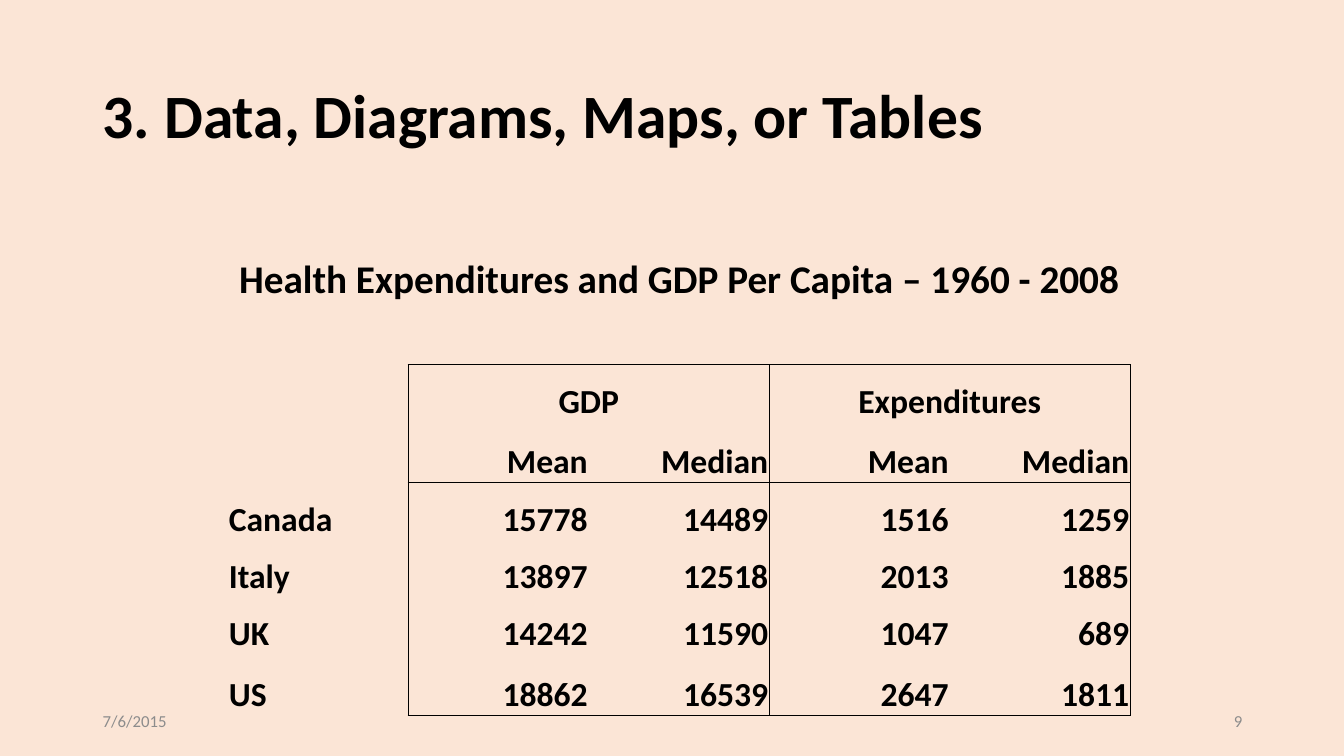
from lxml import etree
from pptx import Presentation
from pptx import util as u
from pptx.dml.color import RGBColor
from pptx.enum import text
from pptx.oxml import ns

LEFT, CENTER, RIGHT = text.PP_ALIGN.LEFT, text.PP_ALIGN.CENTER, text.PP_ALIGN.RIGHT


def write(frame, words, size, color, bold, align):
    frame.text = words
    paragraph = frame.paragraphs[0]
    paragraph.alignment = align
    for run in paragraph.runs:
        run.font.name = "Calibri"
        run.font.size = u.Pt(size)
        run.font.bold = bold
        run.font.color.rgb = RGBColor.from_string(color)


def set_border(cell, side, visible):
    line = etree.SubElement(cell._tc.get_or_add_tcPr(), ns.qn(f"a:ln{side}"), w=str(u.Pt(1)))
    if visible:
        fill = etree.SubElement(line, ns.qn("a:solidFill"))
        etree.SubElement(fill, ns.qn("a:srgbClr"), val="000000")
    else:
        etree.SubElement(line, ns.qn("a:noFill"))


presentation = Presentation()
presentation.slide_width = u.Inches(13.33)
presentation.slide_height = u.Inches(7.5)
slide = presentation.slides.add_slide(presentation.slide_layouts[6])
slide.background.fill.solid()
slide.background.fill.fore_color.rgb = RGBColor.from_string("FBE5D6")

# Title, date and slide number
labels = [
    ("3. Data, Diagrams, Maps, or Tables", 0.92, 0.4, 11.5, 1.45, 44, "000000", True, LEFT),
    ("7/6/2015", 0.92, 6.95, 3, 0.4, 12, "8C8C8C", False, LEFT),
    ("9", 9.42, 6.95, 3, 0.4, 12, "8C8C8C", False, RIGHT),
]
for words, left, top, width, height, size, color, bold, align in labels:
    box = slide.shapes.add_textbox(*map(u.Inches, (left, top, width, height)))
    box.text_frame.word_wrap = True
    box.text_frame.vertical_anchor = text.MSO_ANCHOR.MIDDLE
    write(box.text_frame, words, size, color, bold, align)

# Table grid
rows = [
    ["Health Expenditures and GDP Per Capita – 1960 - 2008", "", "", "", ""],
    ["", "", "", "", ""],
    ["", "GDP", "", "Expenditures", ""],
    ["", "Mean", "Median", "Mean", "Median"],
    ["Canada", "15778", "14489", "1516", "1259"],
    ["Italy", "13897", "12518", "2013", "1885"],
    ["UK", "14242", "11590", "1047", "689"],
    ["US", "18862", "16539", "2647", "1811"],
]
row_heights = [0.86, 0.6, 0.57, 0.6, 0.57, 0.57, 0.57, 0.6]
spans = {(0, 0): 5, (2, 1): 2, (2, 3): 2}
table = slide.shapes.add_table(
    len(rows), 5, u.Inches(2.26), u.Inches(2.16), u.Inches(8.96), u.Inches(4.96)
).table
table.first_row = False
table.horz_banding = False
for column in table.columns:
    column.width = u.Inches(1.79)
for table_row, height in zip(table.rows, row_heights):
    table_row.height = u.Inches(height)
for (r, c), span in spans.items():
    table.cell(r, c).merge(table.cell(r, c + span - 1))

# Cell text, and rules around the two groups of figures
vertical_rules = (1, 3, 5)
horizontal_rules = (2, 4, 8)
for r, row in enumerate(rows):
    for c, words in enumerate(row):
        cell = table.cell(r, c)
        span = spans.get((r, c), 1)
        set_border(cell, "L", r >= 2 and c in vertical_rules)
        set_border(cell, "R", r >= 2 and c + span in vertical_rules)
        set_border(cell, "T", c >= 1 and r in horizontal_rules)
        set_border(cell, "B", c >= 1 and r + 1 in horizontal_rules)
        cell.fill.background()
        cell.margin_left = cell.margin_right = cell.margin_top = u.Inches(0.01)
        cell.margin_bottom = 0
        cell.vertical_anchor = text.MSO_ANCHOR.BOTTOM
        if words:
            align = CENTER if span > 1 else LEFT if c == 0 else RIGHT
            write(cell.text_frame, words, 28 if r == 0 else 24, "000000", True, align)

presentation.save("out.pptx")
